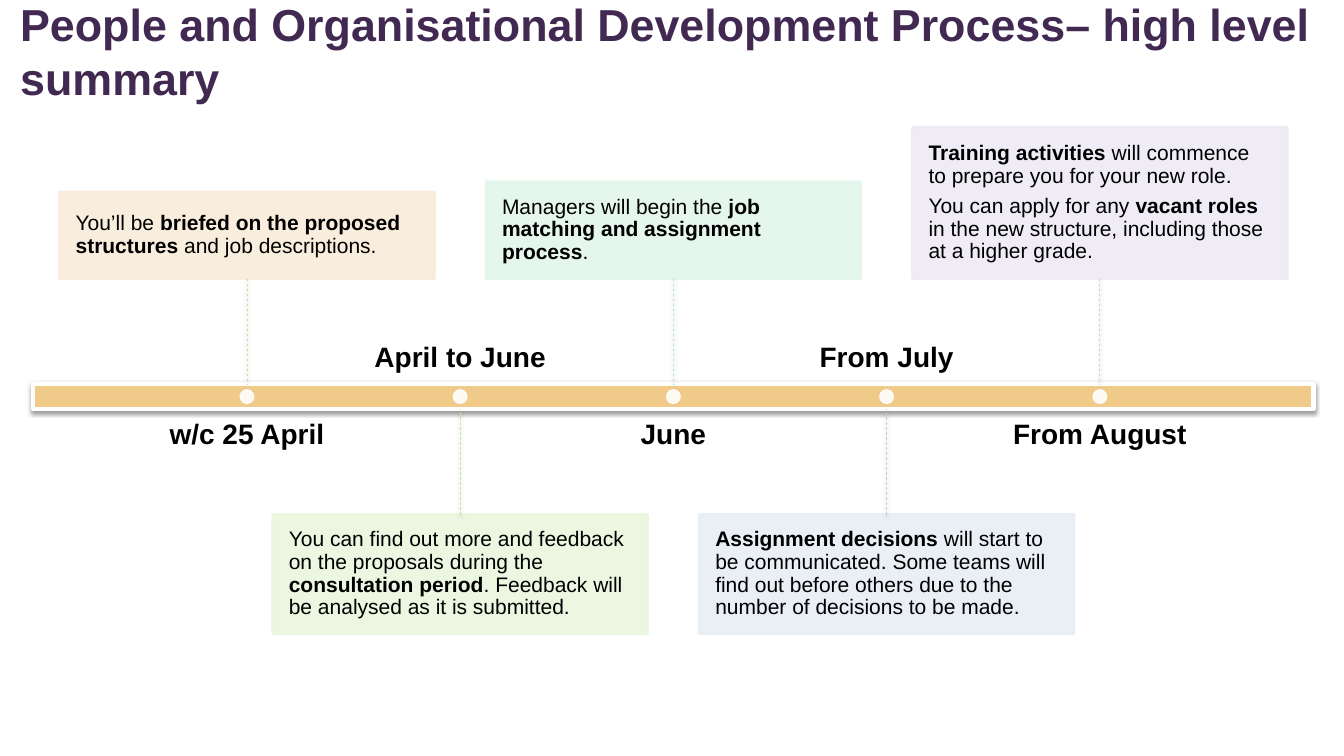
from lxml.etree import SubElement
from pptx import Presentation
from pptx.dml.color import RGBColor
from pptx.enum.dml import MSO_LINE
from pptx.enum.shapes import MSO_CONNECTOR, MSO_SHAPE
from pptx.enum.text import MSO_ANCHOR as ANCHOR, PP_ALIGN as ALIGN
from pptx.oxml.ns import qn
from pptx.util import Pt

BAR = (23.8, 274.3, 914.4, 18)
FIRST_X, STEP = 176.4, 152.3
CARD_W, STEM = 267.8, 75.3
LABEL_W, LABEL_H, LABEL_GAP = 243.4, 49.7, 7.6
DOT = 10.8

MILESTONES = [
    ("w/c 25 April", 61.9, "F9ECDA", "EFCA89",
     ["You’ll be **briefed on the proposed structures **and job descriptions."]),
    ("April to June", 85, "EAF7DE", "BBEA9A",
     ["You can find out more and feedback on the proposals during the "
      "**consultation period**. Feedback will be analysed as it is submitted."]),
    ("June", 69.1, "E3F6EC", "AAE6CB",
     ["Managers will begin the **job matching and assignment process**."]),
    ("From July", 85, "E7EEF5", "B9CEE3",
     ["**Assignment decisions **will start to be communicated. Some teams will "
      "find out before others due to the number of decisions to be made."]),
    ("From August", 108, "EFEAF4", "D3C6E2",
     ["**Training activities **will commence to prepare you for your new role.",
      "You can apply for any **vacant roles **in the new structure, including "
      "those at a higher grade."]),
]


def paint(fill, color, alpha=100):
    """Make a fill solid in a hex colour with an opacity in percent."""
    fill.solid()
    fill.fore_color.rgb = RGBColor.from_string(color)
    if alpha < 100:
        clr = fill._xPr.find(qn("a:solidFill"))[0]
        SubElement(clr, qn("a:alpha"), val=str(alpha * 1000))


def cast_shadow(sp):
    """Give a shape or connector a soft shadow straight below it."""
    effects = SubElement(sp._element.spPr, qn("a:effectLst"))
    shadow = SubElement(effects, qn("a:outerShdw"), blurRad=str(Pt(3.1)),
                        dist=str(Pt(1.6)), dir="5400000", rotWithShape="0")
    clr = SubElement(shadow, qn("a:srgbClr"), val="000000")
    SubElement(clr, qn("a:alpha"), val="38000")


def add_box(slide, kind, box, color, alpha=100, line_width=0, line_color=None):
    """Add a filled preset shape, outlined if a line width is given."""
    sp = slide.shapes.add_shape(kind, *map(Pt, box))
    paint(sp.fill, color, alpha)
    if line_width:
        sp.line.width = Pt(line_width)
        paint(sp.line.fill, line_color or color, alpha)
    else:
        sp.line.fill.background()
    return sp


def write(sp, texts, size, color="000000", bold=False, align=ALIGN.LEFT,
          anchor=ANCHOR.MIDDLE, inset=0, spacing=0.9):
    """Write paragraphs into a shape, with ** around the bold parts."""
    tf = sp.text_frame
    tf.word_wrap = True
    tf.vertical_anchor = anchor
    tf.margin_left = tf.margin_right = tf.margin_top = tf.margin_bottom = Pt(inset)
    for i, text in enumerate(texts):
        p = tf.add_paragraph() if i else tf.paragraphs[0]
        p.alignment = align
        p.line_spacing = spacing
        p.space_after = Pt(size * 0.35)
        p.font.name, p.font.size, p.font.bold = "Arial", Pt(size), bold
        p.font.color.rgb = RGBColor.from_string(color)
        for j, part in enumerate(text.split("**")):
            if part:
                r = p.add_run()
                r.text = part
                if j % 2:
                    r.font.bold = True


def add_title(slide, box, text):
    """Add the slide title."""
    sp = slide.shapes.add_textbox(*map(Pt, box))
    write(sp, [text], 32, "412952", True, spacing=1.0)


def add_milestone(slide, x, bar, above, label, height, color, stem_color, texts):
    """Add a card, its stem, its date and its dot, centred on x of the bar."""
    _, top, _, thick = bar
    bottom = top + thick
    edge, end = (top, top - STEM) if above else (bottom, bottom + STEM)
    card_top = end - height if above else end
    label_top = bottom + LABEL_GAP if above else top - LABEL_GAP - LABEL_H

    sp = slide.shapes.add_textbox(
        *map(Pt, (x - LABEL_W / 2, label_top, LABEL_W, LABEL_H)))
    write(sp, [label], 20, bold=True, align=ALIGN.CENTER,
          anchor=ANCHOR.TOP if above else ANCHOR.BOTTOM)

    card = add_box(slide, MSO_SHAPE.RECTANGLE,
                   (x - CARD_W / 2, card_top, CARD_W, height), color, 90, 2)
    card.shadow.inherit = False
    write(card, texts, 15, inset=11.5)

    stem = slide.shapes.add_connector(
        MSO_CONNECTOR.STRAIGHT, *map(Pt, (x, end, x, edge)))
    stem.line.width = Pt(0.5)
    paint(stem.line.fill, stem_color)
    stem.line.dash_style = MSO_LINE.DASH
    cast_shadow(stem)

    dot = add_box(slide, MSO_SHAPE.OVAL,
                  (x - DOT / 2, top + (thick - DOT) / 2, DOT, DOT), "FFFFFF", 90)
    dot.shadow.inherit = False


def add_timeline(slide, bar):
    """Add the bar and its milestones, alternating above and below."""
    sp = add_box(slide, MSO_SHAPE.RECTANGLE, bar, "EFCA89",
                 line_width=3, line_color="FFFFFF")
    cast_shadow(sp)
    for i, milestone in enumerate(MILESTONES):
        add_milestone(slide, FIRST_X + i * STEP, bar, i % 2 == 0, *milestone)


def main():
    """Build and save the slide."""
    prs = Presentation()
    prs.slide_width, prs.slide_height = Pt(960), Pt(540)
    slide = prs.slides.add_slide(prs.slide_layouts[6])
    add_timeline(slide, BAR)
    add_title(slide, (14.4, 10.8, 924, 50.4),
              "People and Organisational Development Process– high level summary")
    prs.save("out.pptx")


if __name__ == "__main__":
    main()
